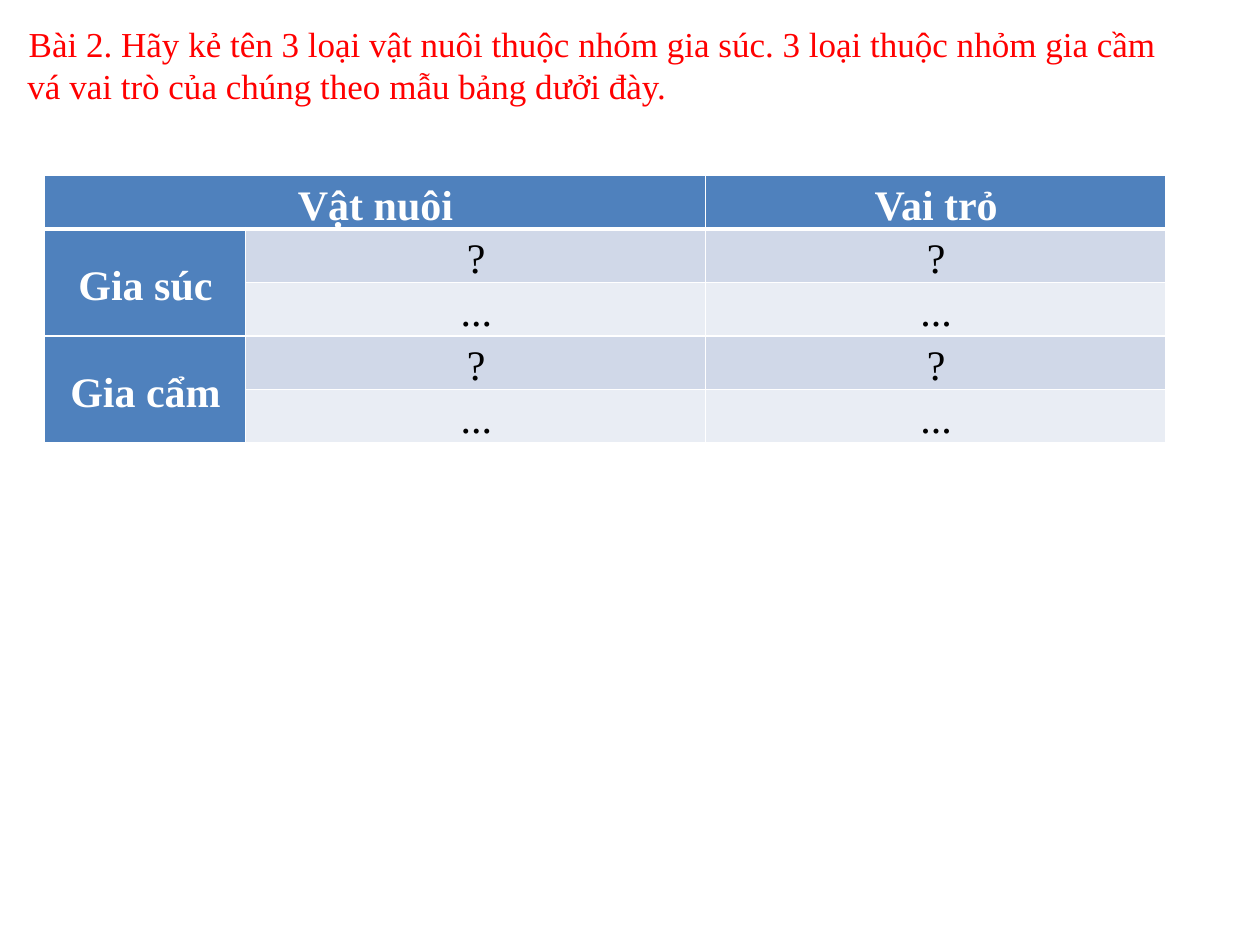
from lxml import etree
from pptx import Presentation
from pptx.dml.color import RGBColor
from pptx.enum.shapes import MSO_SHAPE
from pptx.enum.text import MSO_ANCHOR as Anchor, MSO_AUTO_SIZE as AutoSize, PP_ALIGN as Align
from pptx.oxml.ns import qn
from pptx.util import Pt

WHITE = RGBColor(0xFF, 0xFF, 0xFF)
BLACK = RGBColor(0, 0, 0)
RED = RGBColor(0xFF, 0, 0)
BLUE = RGBColor(0x4F, 0x81, 0xBD)
BAND_DARK = RGBColor(0xD0, 0xD8, 0xE8)
BAND_LIGHT = RGBColor(0xE9, 0xED, 0xF4)

QUESTION = ("Bài 2. Hãy kẻ tên 3 loại vật nuôi thuộc nhóm gia súc. "
            "3 loại thuộc nhỏm gia cầm vá vai trò của chúng theo mẫu bảng dưởi đày.")
ROWS = [
    ["Vật nuôi", "", "Vai trỏ"],
    ["Gia súc", "?", "?"],
    ["", "...", "..."],
    ["Gia cẩm", "?", "?"],
    ["", "...", "..."],
]
MERGES = [((0, 0), (0, 1)), ((1, 0), (2, 0)), ((3, 0), (4, 0))]
COLUMN_WIDTHS = [115.2, 262.8, 262.8]
ROW_HEIGHT = 19.8
THIN, THICK = 1, 3


def write(frame, text, size, color, bold=False, align=Align.LEFT, spacing=None):
    para = frame.paragraphs[0]
    para.alignment = align
    para.line_spacing = spacing
    para._p.get_or_add_pPr().set("indent", str(Pt(0.72)))
    if not text:
        return
    span = para.add_run()
    span.text = text
    font = span.font
    font.name, font.size, font.bold = "Times New Roman", Pt(size), bold
    font.color.rgb = color


def add_border(cell, side, width):
    line = etree.SubElement(cell._tc.get_or_add_tcPr(), qn(f"a:ln{side}"), w=str(Pt(width)))
    fill = etree.SubElement(line, qn("a:solidFill"))
    etree.SubElement(fill, qn("a:srgbClr"), val=str(WHITE))


class SlideBuilder:
    def __init__(self, page):
        self.page = page

    def table(self, left, top, height):
        holder = self.page.shapes.add_table(
            len(ROWS), len(COLUMN_WIDTHS), Pt(left), Pt(top),
            Pt(sum(COLUMN_WIDTHS)), Pt(ROW_HEIGHT * len(ROWS)))
        grid = holder.table
        for column, width in zip(grid.columns, COLUMN_WIDTHS):
            column.width = Pt(width)
        for row in grid.rows:
            row.height = Pt(ROW_HEIGHT)
        for r, texts in enumerate(ROWS):
            for c, text in enumerate(texts):
                self.cell(grid.cell(r, c), text, r, c)
        for first, last in MERGES:
            grid.cell(*first).merge(grid.cell(*last))
        holder.height = Pt(height)

    def cell(self, cell, text, row, column):
        heading = row == 0 or column == 0
        at_bottom = row == 0 or (row == 2 and column > 0)
        cell.margin_left = cell.margin_right = Pt(0.72)
        cell.margin_top = cell.margin_bottom = 0
        cell.vertical_anchor = Anchor.BOTTOM if at_bottom else Anchor.MIDDLE
        for side in "LRTB":
            under_header = (row, side) in ((0, "B"), (1, "T"))
            add_border(cell, side, THICK if under_header else THIN)
        cell.fill.solid()
        band = BAND_DARK if row % 2 else BAND_LIGHT
        cell.fill.fore_color.rgb = BLUE if heading else band
        write(cell.text_frame, text, 24, WHITE if heading else BLACK,
              bold=heading, align=Align.CENTER, spacing=1.15)

    def question(self, text, left, top, width, height):
        box = self.page.shapes.add_shape(
            MSO_SHAPE.RECTANGLE, Pt(left), Pt(top), Pt(width), Pt(height))
        box.shadow.inherit = False
        box.fill.solid()
        box.fill.fore_color.rgb = WHITE
        box.line.fill.background()
        frame = box.text_frame
        frame.word_wrap = True
        frame.auto_size = AutoSize.SHAPE_TO_FIT_TEXT
        frame.vertical_anchor = Anchor.MIDDLE
        write(frame, text, 20, RED)


def main():
    deck = Presentation()
    deck.slide_width, deck.slide_height = Pt(720), Pt(540)
    builder = SlideBuilder(deck.slides.add_slide(deck.slide_layouts[6]))
    builder.table(25.2, 100.4, 165.6)
    builder.question(QUESTION, 8.64, 9.36, 674.64, 55.44)
    deck.save("out.pptx")


if __name__ == "__main__":
    main()
